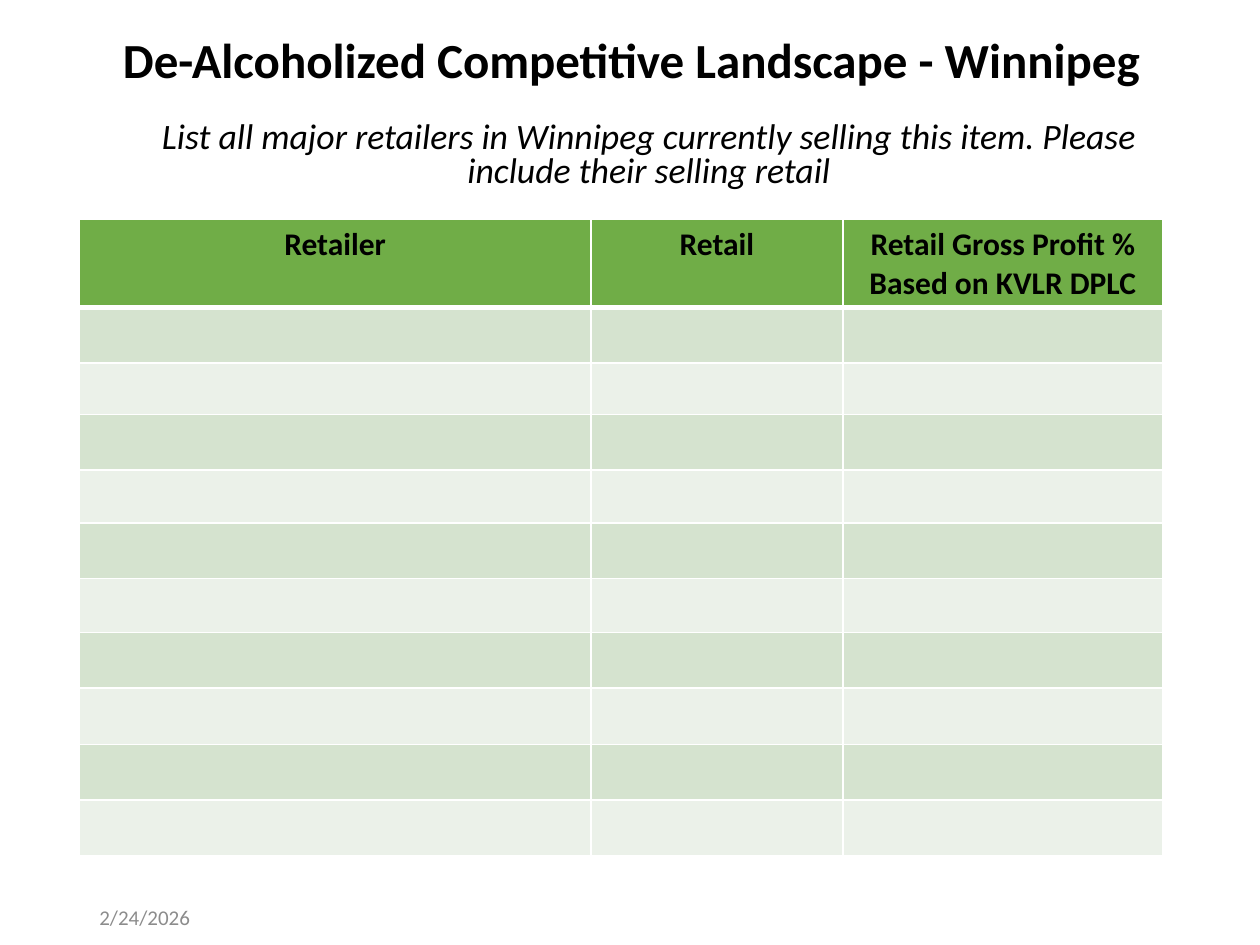
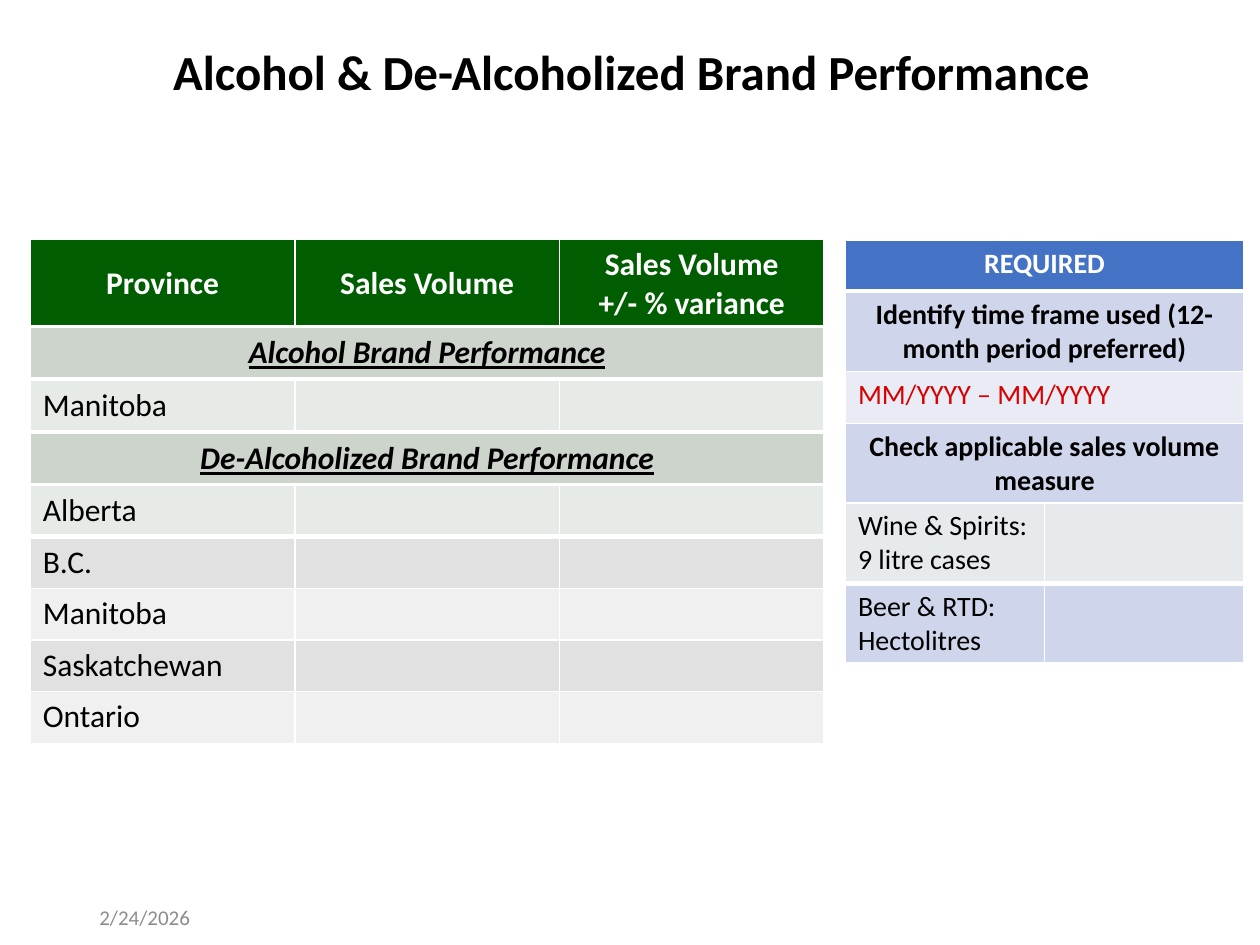
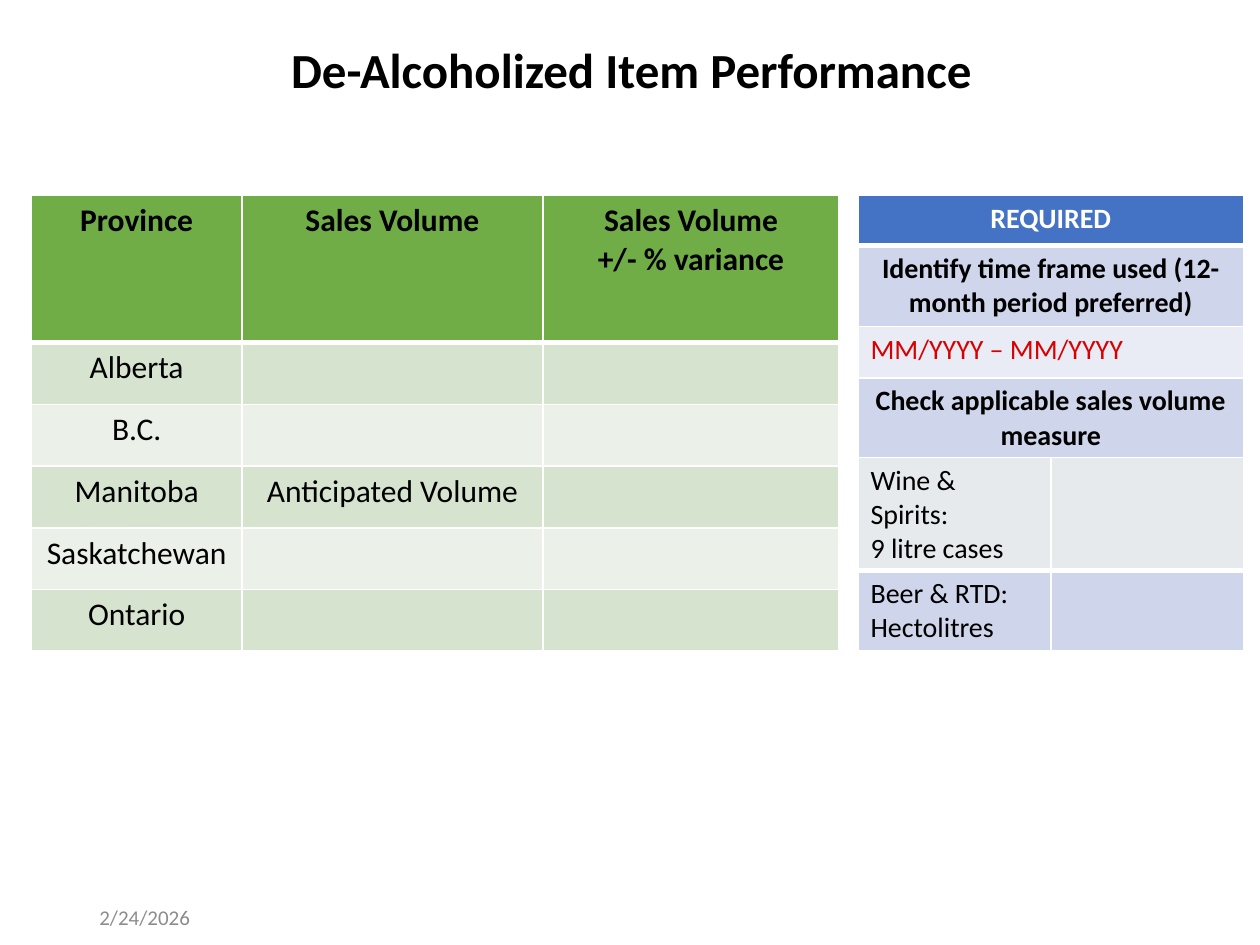
from lxml import etree
from pptx import Presentation
from pptx.dml.color import RGBColor
from pptx.enum.text import MSO_ANCHOR, PP_ALIGN
from pptx.oxml.ns import qn
from pptx.util import Inches, Pt

CENTER, LEFT = PP_ALIGN.CENTER, PP_ALIGN.LEFT
TOP, MIDDLE = MSO_ANCHOR.TOP, MSO_ANCHOR.MIDDLE

FONT = "Calibri"
BLACK, WHITE, RED, GRAY = "000000", "FFFFFF", "D80000", "8C8C8C"
GREEN, GREEN_BANDS = "70AD47", ("D5E3CF", "EBF1E9")
DARK_GREEN, SECTION, PROVINCE = "005E00", "CCD4CC", "E7EBE8"
GRAY_BANDS = ("E1E1E1", "F0F0F0")
BLUE, BLUE_DARK_BAND, BLUE_LIGHT_BAND, WINE = "4472C4", "CFD5EA", "E9EBF5", "E7EAED"
THIN, THICK = 1, 3

# Row styles: size, colour, bold, italic and underlined, alignment, anchor, bottom border
STYLES = {
    "green header": (18, BLACK, True, False, CENTER, TOP, THICK),
    "dark header": (18, WHITE, True, False, CENTER, MIDDLE, THICK),
    "section": (18, BLACK, True, True, CENTER, TOP, THICK),
    "first province": (18, BLACK, False, False, LEFT, TOP, THICK),
    "province": (18, BLACK, False, False, LEFT, TOP, THIN),
    "centered": (18, BLACK, False, False, CENTER, TOP, THIN),
    "required header": (16, WHITE, True, False, CENTER, TOP, THICK),
    "request": (16, BLACK, True, False, CENTER, TOP, THIN),
    "period": (16, RED, False, False, LEFT, TOP, THIN),
    "wine": (16, BLACK, False, False, LEFT, TOP, THICK),
    "beer": (16, BLACK, False, False, LEFT, TOP, THIN),
}


def format_paragraph(paragraph, size, color, bold=False, italic=False, align=LEFT):
    paragraph.alignment = align
    font = paragraph.font
    font.name, font.size, font.bold, font.italic = FONT, Pt(size), bold, italic
    font.color.rgb = RGBColor.from_string(color)


def add_grid(slide, left, top, widths, rows):
    """Add a table; each row is (height, style name, fill, cell texts)."""
    heights = [row[0] for row in rows]
    table = slide.shapes.add_table(
        len(rows), len(widths), Inches(left), Inches(top),
        Inches(sum(widths)), Inches(sum(heights))).table
    table.first_row = table.horz_banding = False
    for column, width in zip(table.columns, widths):
        column.width = Inches(width)
    top_border = THIN
    for row_index, (height, style, fill, texts) in enumerate(rows):
        size, color, bold, emphasis, align, anchor, bottom_border = STYLES[style]
        table.rows[row_index].height = Inches(height)
        for column_index, text in enumerate(texts):
            cell = table.cell(row_index, column_index)
            cell.vertical_anchor = anchor
            if text:
                cell.text = text
                for paragraph in cell.text_frame.paragraphs:
                    format_paragraph(paragraph, size, color, bold, emphasis, align)
                    paragraph.font.underline = emphasis
            properties = cell._tc.get_or_add_tcPr()
            borders = {"L": THIN, "R": THIN, "T": top_border, "B": bottom_border}
            for side, points in borders.items():
                line = etree.SubElement(properties, qn("a:ln" + side), w=str(Pt(points)))
                line_fill = etree.SubElement(line, qn("a:solidFill"))
                etree.SubElement(line_fill, qn("a:srgbClr"), val=WHITE)
            cell.fill.solid()
            cell.fill.fore_color.rgb = RGBColor.from_string(fill)
        top_border = bottom_border


presentation = Presentation()
presentation.slide_width, presentation.slide_height = Inches(10), Inches(7.5)

# Titles and dates
slides = []
for title_text, title_top, title_height in (
    ("De-Alcoholized Competitive Landscape - Winnipeg", 0.16, 0.67),
    ("Alcohol & De-Alcoholized Brand Performance", 0.13, 0.92),
    ("De-Alcoholized Item Performance", 0.13, 0.89),
):
    slide = presentation.slides.add_slide(presentation.slide_layouts[5])
    title = slide.shapes.title
    title.left, title.top = Inches(0.51), Inches(title_top)
    title.width, title.height = Inches(9), Inches(title_height)
    title.text = title_text
    title.text_frame.vertical_anchor = MIDDLE
    paragraph = title.text_frame.paragraphs[0]
    paragraph.line_spacing = 0.9
    format_paragraph(paragraph, 28, BLACK, bold=True, align=CENTER)

    date = slide.shapes.add_textbox(Inches(0.69), Inches(7.2), Inches(2.25), Inches(0.15))
    date.text_frame.word_wrap = True
    date.text_frame.vertical_anchor = MIDDLE
    date.text_frame.text = "2/24/2026"
    format_paragraph(date.text_frame.paragraphs[0], 12, GRAY)
    slides.append(slide)
landscape, brand, item = slides

# Competitive landscape: instruction and retailer table
instruction = landscape.shapes.add_textbox(
    Inches(0.92), Inches(0.92), Inches(8.46), Inches(0.67))
instruction.text_frame.word_wrap = True
instruction.text_frame.text = (
    "List all major retailers in Winnipeg currently selling this item. "
    "Please include their selling retail")
paragraph = instruction.text_frame.paragraphs[0]
paragraph.line_spacing = 0.8
format_paragraph(paragraph, 20.4, BLACK, italic=True, align=CENTER)

retailer_rows = [(0.7, "green header", GREEN,
                  ("Retailer", "Retail", "Retail Gross Profit % Based on KVLR DPLC"))]
retailer_heights = (0.44, 0.41, 0.44, 0.42, 0.44, 0.43, 0.44, 0.45, 0.44, 0.44)
for index, height in enumerate(retailer_heights):
    retailer_rows.append((height, "centered", GREEN_BANDS[index % 2], ("", "", "")))
add_grid(landscape, 0.63, 1.74, (4.06, 2, 2.54), retailer_rows)

# Brand performance: stacked tables
brand_columns = (2.1, 2.1, 2.1)
brand_width = (sum(brand_columns),)
other_provinces = [(0.41, "first province", PROVINCE, ("Alberta", "", ""))]
for index, name in enumerate(("B.C.", "Manitoba", "Saskatchewan", "Ontario")):
    other_provinces.append((0.41, "province", GRAY_BANDS[index % 2], (name, "", "")))
for top, widths, rows in (
    (1.9, brand_columns, [(0.7, "dark header", DARK_GREEN,
                           ("Province", "Sales Volume", "Sales Volume\n+/- % variance"))]),
    (2.6, brand_width, [(0.41, "section", SECTION, ("Alcohol Brand Performance",))]),
    (3.02, brand_columns, [(0.41, "first province", PROVINCE, ("Manitoba", "", ""))]),
    (3.44, brand_width, [(0.41, "section", SECTION, ("De-Alcoholized Brand Performance",))]),
    (3.85, brand_columns, other_provinces),
):
    add_grid(brand, 0.24, top, widths, rows)

# Item performance: province table
item_rows = [(1.17, "green header", GREEN,
              ("Province", "Sales Volume", "Sales Volume\n+/- % variance"))]
for index, (name, volume) in enumerate((
    ("Alberta", ""), ("B.C.", ""), ("Manitoba", "Anticipated Volume"),
    ("Saskatchewan", ""), ("Ontario", ""),
)):
    item_rows.append((0.49, "centered", GREEN_BANDS[index % 2], (name, volume, "")))
add_grid(item, 0.25, 1.55, (1.67, 2.39, 2.35), item_rows)

# Required information beside both performance tables
required_rows = [
    (0.4, "required header", BLUE, ("REQUIRED",)),
    (0.64, "request", BLUE_DARK_BAND,
     ("Identify time frame used (12-month period preferred)",)),
    (0.41, "period", BLUE_LIGHT_BAND, ("MM/YYYY – MM/YYYY",)),
    (0.63, "request", BLUE_DARK_BAND, ("Check applicable sales volume measure",)),
]
required_height = sum(row[0] for row in required_rows)
for slide, left, top, width, wine_height in (
    (brand, 6.71, 1.91, 3.16, 0.64),
    (item, 6.81, 1.55, 3.06, 0.9),
):
    add_grid(slide, left, top, (width,), required_rows)
    add_grid(slide, left, top + required_height, (width / 2, width / 2), [
        (wine_height, "wine", WINE, ("Wine & Spirits:\n9 litre cases", "")),
        (0.63, "beer", BLUE_DARK_BAND, ("Beer & RTD:\nHectolitres", "")),
    ])

presentation.save("out.pptx")
